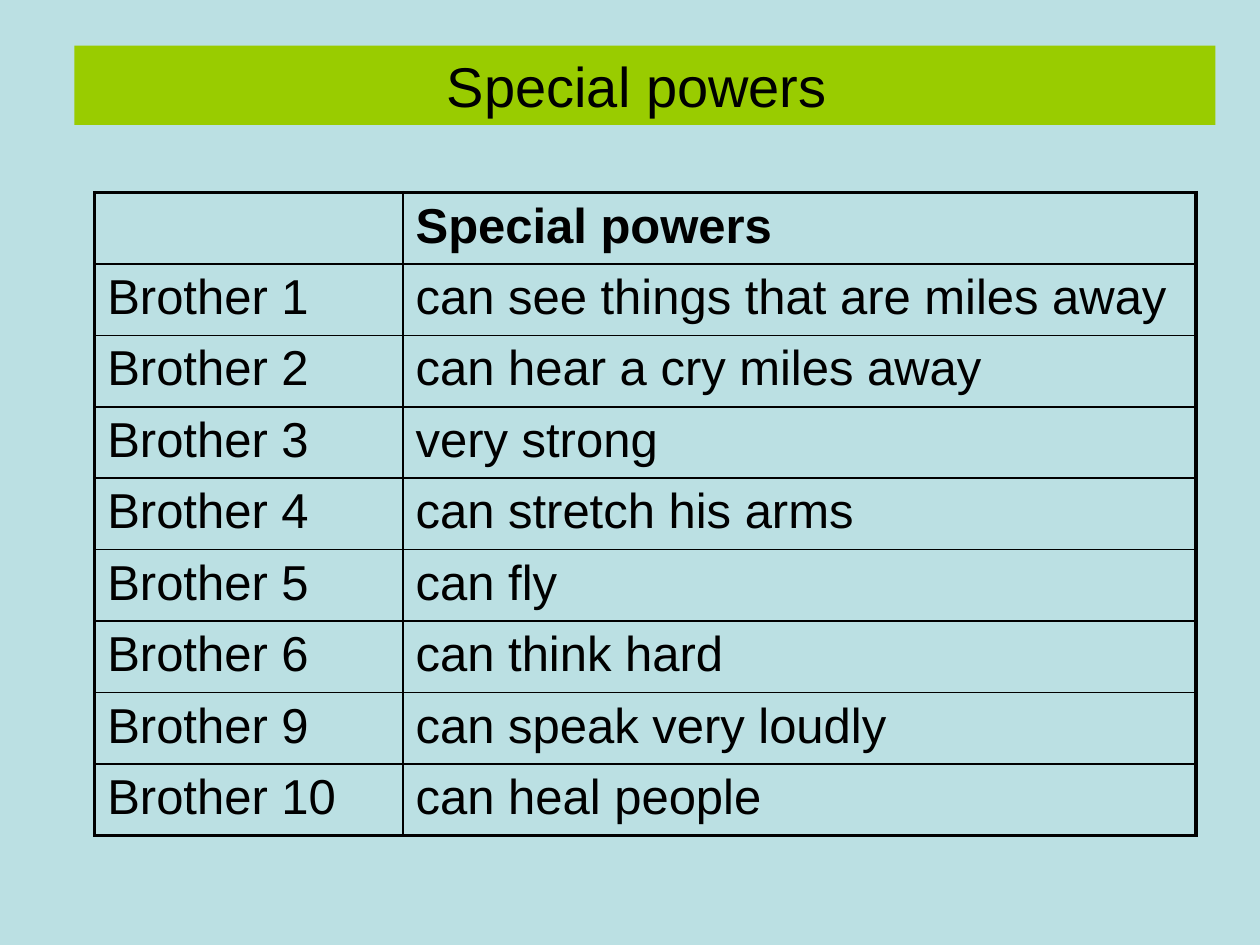
from lxml.etree import SubElement
from pptx import Presentation
from pptx.dml.color import RGBColor
from pptx.enum.shapes import MSO_SHAPE as Shape
from pptx.enum.text import MSO_ANCHOR as Anchor, PP_ALIGN as Align
from pptx.oxml.ns import qn
from pptx.util import Cm, Pt

BACKGROUND, BANNER, INK = "BBE0E3", "99CC00", "000000"
FONT = "Arial"
THIN, THICK = Pt(1), Pt(2.25)
COLUMN_SHARES = (0.28, 0.72)
ROWS = [
    ("", "Special powers"),
    ("Brother 1", "can see things that are miles away"),
    ("Brother 2", "can hear a cry miles away"),
    ("Brother 3", "very strong"),
    ("Brother 4", "can stretch his arms"),
    ("Brother 5", "can fly"),
    ("Brother 6", "can think hard"),
    ("Brother 9", "can speak very loudly"),
    ("Brother 10", "can heal people"),
]


def paint(color_format, color):
    color_format.rgb = RGBColor.from_string(color)


def write(para, text, size, bold=False):
    para.text = text
    para.font.name = FONT
    para.font.size = Pt(size)
    para.font.bold = bold
    paint(para.font.color, INK)


def set_borders(cell, widths):
    """Draw the left, right, top and bottom borders; call before filling the cell."""
    properties = cell._tc.get_or_add_tcPr()
    for side, width in zip("LRTB", widths):
        line = SubElement(properties, qn(f"a:ln{side}"), w=str(int(width)))
        fill = SubElement(line, qn("a:solidFill"))
        SubElement(fill, qn("a:srgbClr"), val=INK)


def add_banner(page, box, text):
    banner = page.shapes.add_shape(Shape.RECTANGLE, *box)
    banner.shadow.inherit = False
    banner.fill.solid()
    paint(banner.fill.fore_color, BANNER)
    banner.line.fill.background()
    frame = banner.text_frame
    frame.word_wrap = True
    frame.vertical_anchor = Anchor.TOP
    para = frame.paragraphs[0]
    para.alignment = Align.CENTER
    write(para, text, 32)


def add_powers_table(page, box, rows):
    left, top, width, height = box
    last_row, last_column = len(rows) - 1, len(COLUMN_SHARES) - 1
    table = page.shapes.add_table(len(rows), len(COLUMN_SHARES), *box).table
    table.horz_banding = False
    for column, share in zip(table.columns, COLUMN_SHARES):
        column.width = int(width * share)
    for r, texts in enumerate(rows):
        table.rows[r].height = height // len(rows)
        for c, text in enumerate(texts):
            cell = table.cell(r, c)
            outer_edges = (c == 0, c == last_column, r == 0, r == last_row)
            set_borders(cell, [THICK if outer else THIN for outer in outer_edges])
            cell.fill.background()
            para = cell.text_frame.paragraphs[0]
            para.space_before = Pt(1.4)
            write(para, text, 28, bold=r == 0)


def main():
    deck = Presentation()
    deck.slide_width, deck.slide_height = Cm(25.4), Cm(19.05)
    page = deck.slides.add_slide(deck.slide_layouts[6])
    page.background.fill.solid()
    paint(page.background.fill.fore_color, BACKGROUND)
    # The trailing space shifts the centred title slightly to the left.
    add_banner(page, (Cm(1.5), Cm(0.92), Cm(23), Cm(1.6)), "Special powers ")
    add_powers_table(page, (Cm(1.91), Cm(3.88), Cm(22.2), Cm(12.96)), ROWS)
    deck.save("out.pptx")


if __name__ == "__main__":
    main()
